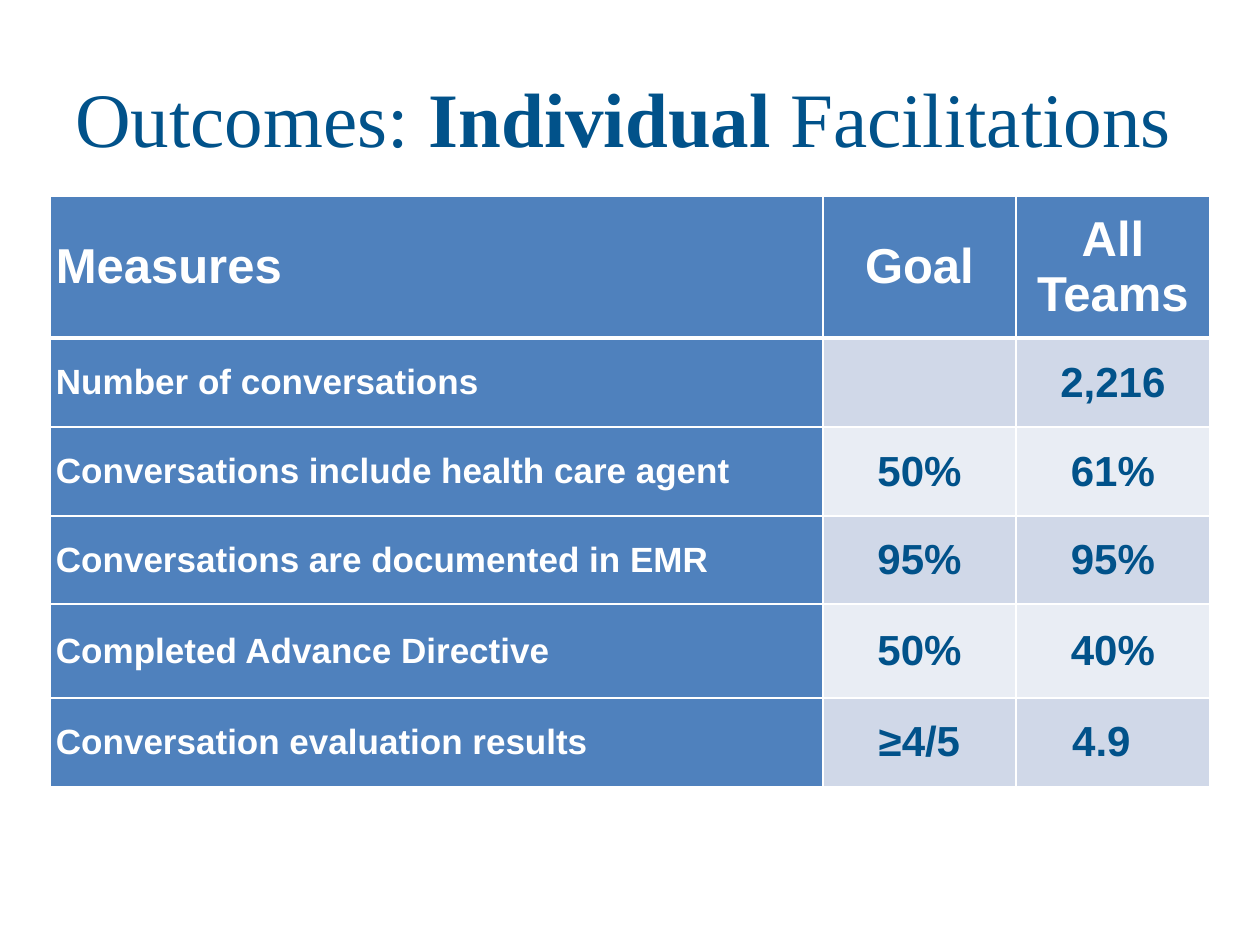
from lxml import etree
from pptx import Presentation
from pptx import util as u
from pptx.dml.color import RGBColor
from pptx.enum import text
from pptx.oxml.ns import qn

EMU_PER_PX = 914400 / 126
COLORS = {
    "navy": "01528A",
    "blue": "4F81BD",
    "band_dark": "D0D8E8",
    "band_light": "E9EDF4",
    "white": "FFFFFF",
}
COLUMN_WIDTHS = [773, 193, 194]
ROW_HEIGHTS = [142, 89, 89, 88, 94, 89]
MEASURES = [
    ("Measures", "Goal", "All Teams"),
    ("Number of conversations", "", "2,216"),
    ("Conversations include health care agent", "50%", "61%"),
    ("Conversations are documented in EMR", "95%", "95%"),
    ("Completed Advance Directive", "50%", "40%"),
    ("Conversation evaluation results", "≥4/5", "4.9"),
]


def px(length):
    return u.Emu(round(length * EMU_PER_PX))


def rgb(name):
    return RGBColor.from_string(COLORS[name])


def write(paragraph, words, *, size, color, font="Arial", bold=True, align=text.PP_ALIGN.LEFT):
    paragraph.alignment = align
    run = paragraph.add_run()
    run.text = words
    run.font.name = font
    run.font.size = u.Pt(size)
    run.font.bold = bold
    run.font.color.rgb = rgb(color)


def set_borders(cell, bottom, top):
    """Draw white cell borders; they must precede the fill in the cell properties."""
    properties = cell._tc.get_or_add_tcPr()
    for index, (side, points) in enumerate([("L", 1), ("R", 1), ("T", top), ("B", bottom)]):
        line = etree.Element(qn(f"a:ln{side}"), w=str(u.Pt(points)))
        fill = etree.SubElement(line, qn("a:solidFill"))
        etree.SubElement(fill, qn("a:srgbClr"), val=COLORS["white"])
        properties.insert(index, line)


def add_title(slide, left, top, width, height):
    frame = slide.shapes.add_textbox(px(left), px(top), px(width), px(height)).text_frame
    frame.word_wrap = True
    frame.vertical_anchor = text.MSO_ANCHOR.MIDDLE
    for words, bold in [("Outcomes: ", False), ("Individual", True), (" Facilitations", False)]:
        write(frame.paragraphs[0], words, size=44, color="navy", font="Times New Roman", bold=bold)


def add_measures_table(slide, left, top):
    table = slide.shapes.add_table(
        len(MEASURES), len(COLUMN_WIDTHS), px(left), px(top),
        px(sum(COLUMN_WIDTHS)), px(sum(ROW_HEIGHTS)),
    ).table
    table.first_col = True
    for column, width in zip(table.columns, COLUMN_WIDTHS):
        column.width = px(width)
    for row, height in zip(table.rows, ROW_HEIGHTS):
        row.height = px(height)

    for r, measure in enumerate(MEASURES):
        for c, words in enumerate(measure):
            cell = table.cell(r, c)
            heading = r == 0 or c == 0
            band = "band_dark" if r % 2 else "band_light"
            cell.fill.solid()
            cell.fill.fore_color.rgb = rgb("blue" if heading else band)
            set_borders(cell, bottom=3 if r == 0 else 1, top=3 if r == 1 else 1)
            cell.vertical_anchor = text.MSO_ANCHOR.MIDDLE
            cell.margin_left = cell.margin_right = px(6)
            cell.margin_top = cell.margin_bottom = px(6)
            if words:
                write(
                    cell.text_frame.paragraphs[0], words,
                    size=28 if r == 0 else 20 if c == 0 else 24,
                    color="white" if heading else "navy",
                    align=text.PP_ALIGN.CENTER if c else text.PP_ALIGN.LEFT,
                )

    # The evaluation score sits a little left of centre
    table.cell(len(MEASURES) - 1, 2).margin_right = px(29)


def main():
    deck = Presentation()
    deck.slide_width, deck.slide_height = px(1260), px(945)
    slide = deck.slides.add_slide(deck.slide_layouts[6])
    add_title(slide, 63, 38, 1134, 157)
    add_measures_table(slide, 50, 196)
    deck.save("out.pptx")


if __name__ == "__main__":
    main()
